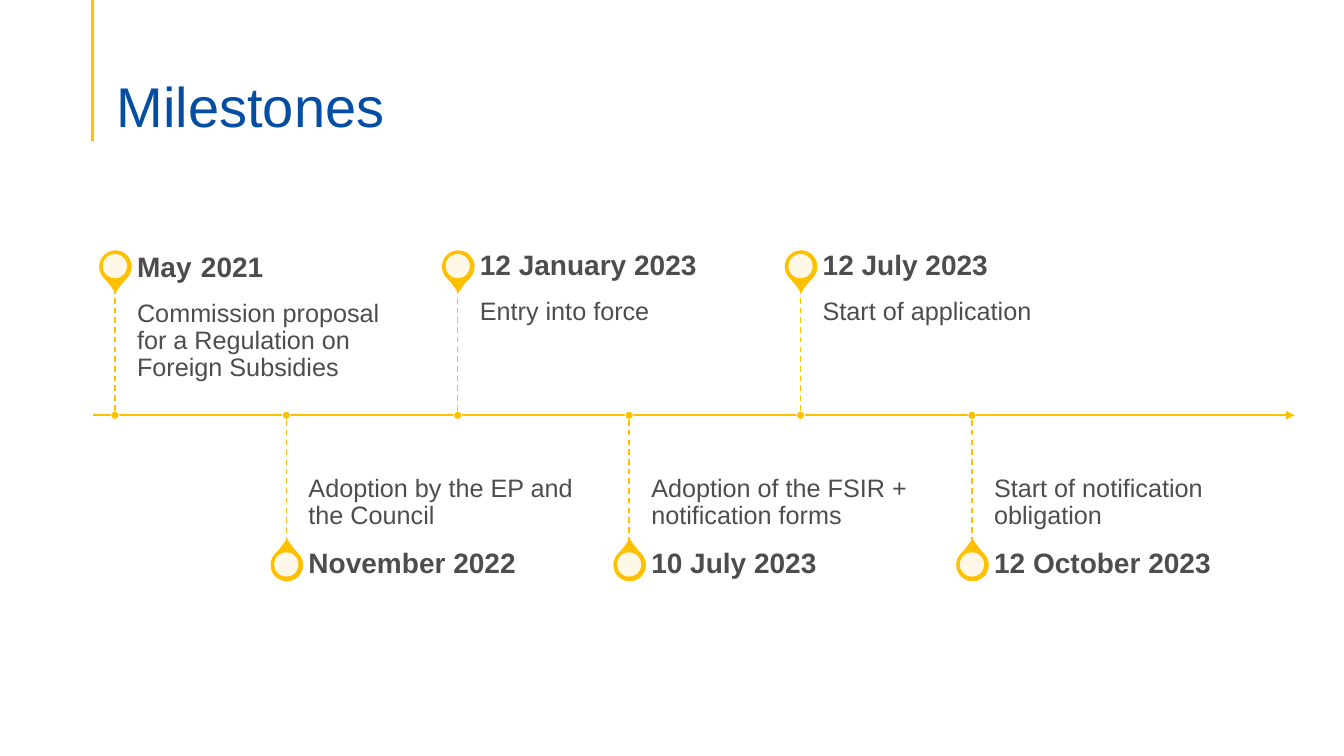
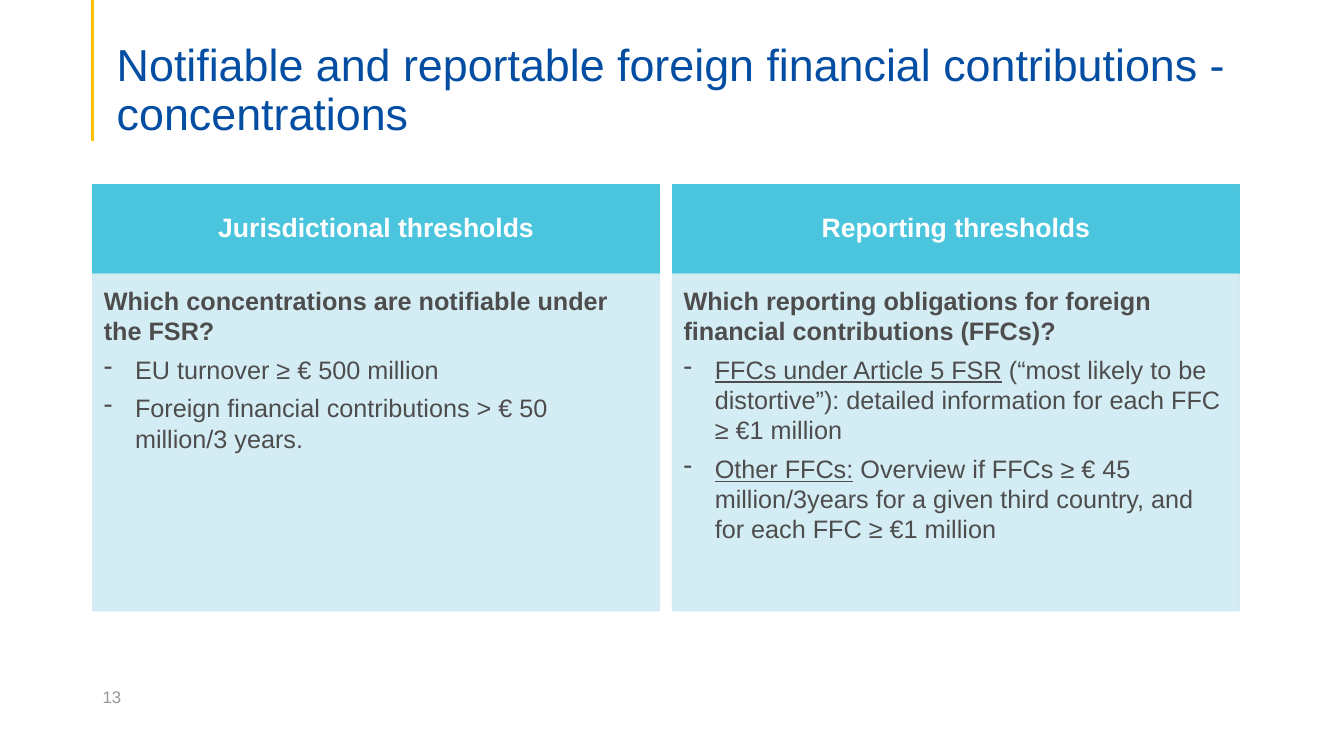
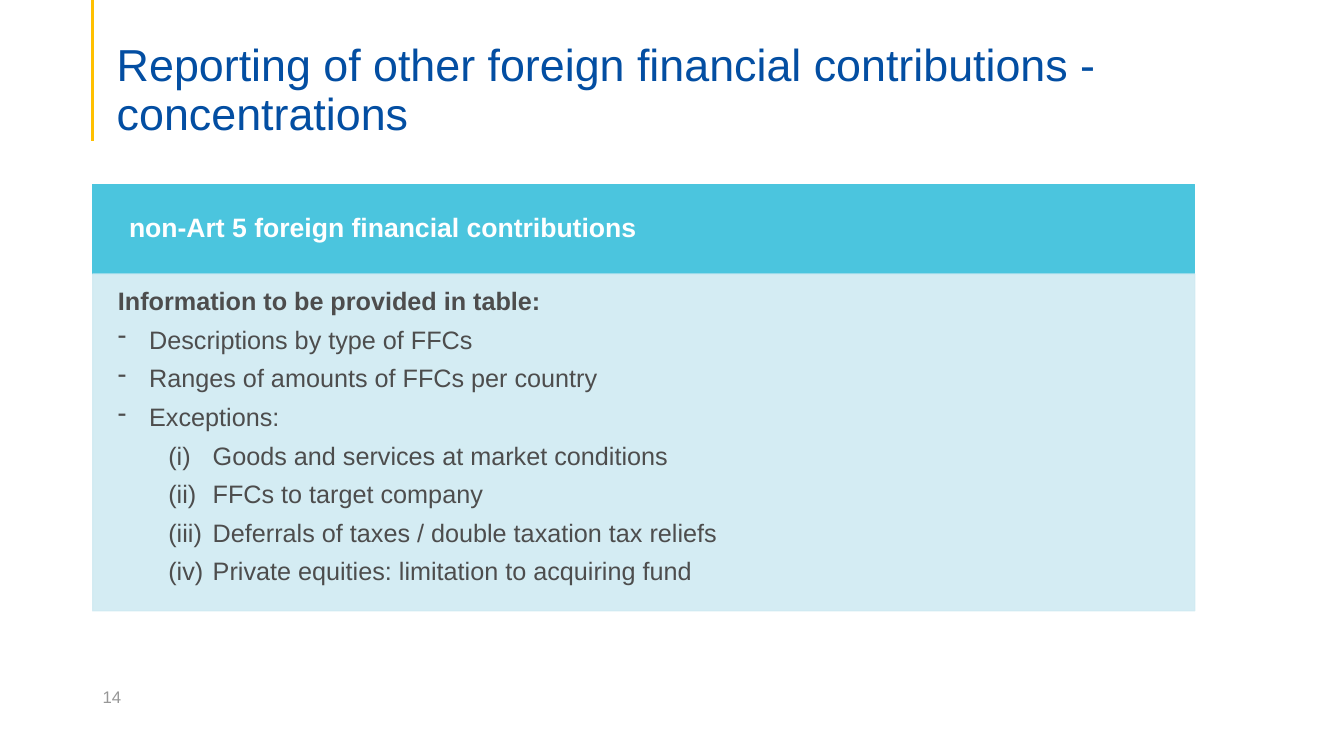
from dataclasses import dataclass

from pptx import Presentation
from pptx.dml.color import RGBColor
from pptx.enum import dml, shapes, text
from pptx.oxml import ns, xmlchemy
from pptx.util import Inches, Pt

GOLD = RGBColor(0xFF, 0xC0, 0x00)
BLUE = RGBColor(0x03, 0x4E, 0xA2)
TEAL = RGBColor(0x4B, 0xC5, 0xDE)
PALE = RGBColor(0xD0, 0xEA, 0xF2)
DARK = RGBColor(0x4D, 0x4D, 0x4D)
GREY = RGBColor(0x97, 0x97, 0x97)
WHITE = RGBColor(0xFF, 0xFF, 0xFF)

FONT = "Arial"
LEFT = 0.92
TOP, MIDDLE, BOTTOM = (
    text.MSO_ANCHOR.TOP, text.MSO_ANCHOR.MIDDLE, text.MSO_ANCHOR.BOTTOM)
CARD_TOP, HEADER_HEIGHT, BODY_HEIGHT = 1.83, 0.89, 3.34
AXIS_Y, STEM, PIN_OFFSET = 4.12, 1.26, 1.48
FIRST_PIN, PIN_PITCH = 1.14, 1.7


@dataclass
class Span:
    text: str
    size: float = 18
    color: RGBColor = DARK
    bold: bool = False
    underline: bool = False


@dataclass
class Para:
    spans: list
    bullet: str = ""  # "" for none, "-" or "(i)"
    align: text.PP_ALIGN = text.PP_ALIGN.LEFT
    spacing: float = 1.0
    after: float = 0


def add_xml(parent, tag, **attributes):
    child = xmlchemy.OxmlElement(tag)
    for name, value in attributes.items():
        child.set(name, value)
    parent.append(child)


class Builder:
    def __init__(self):
        self.deck = Presentation()
        self.deck.slide_width = Inches(13.33)
        self.deck.slide_height = Inches(7.5)
        self.page = None

    def new_page(self, title, size=32, number=None):
        self.page = self.deck.slides.add_slide(self.deck.slide_layouts[6])
        self.line((LEFT, 0), (LEFT, 1.4), 2.25)
        if number:
            self.text_box((LEFT, 6.71, 3, 0.4),
                          [Para([Span(number, 12, GREY)])], MIDDLE)
        self.text_box((1.06, 0.53, 11.5, 0.86),
                      [Para([Span(title, size, BLUE)], spacing=0.9)],
                      BOTTOM, (0.1, 0.05, 0.1, 0))

    def line(self, start, end, width, dashed=False, arrow=False):
        line = self.page.shapes.add_connector(
            shapes.MSO_CONNECTOR.STRAIGHT, *map(Inches, start + end))
        line.line.color.rgb = GOLD
        line.line.width = Pt(width)
        if dashed:
            line.line.dash_style = dml.MSO_LINE.DASH
        properties = line.element.spPr
        if arrow:
            add_xml(properties.find(ns.qn("a:ln")), "a:tailEnd", type="triangle")
        add_xml(properties, "a:effectLst")

    def shape(self, kind, at, fill, outline=None, width=1, opacity=100):
        shape = self.page.shapes.add_shape(kind, *map(Inches, at))
        shape.shadow.inherit = False
        shape.fill.solid()
        shape.fill.fore_color.rgb = fill
        if outline is None:
            shape.line.fill.background()
        else:
            shape.line.color.rgb = outline
            shape.line.width = Pt(width)
        if opacity < 100:
            for color in list(shape.element.spPr.iter(ns.qn("a:srgbClr"))):
                add_xml(color, "a:alpha", val=str(opacity * 1000))
        return shape

    def dot(self, x, y, diameter, fill, **style):
        at = (x - diameter / 2, y - diameter / 2, diameter, diameter)
        self.shape(shapes.MSO_SHAPE.OVAL, at, fill, **style)

    def text_box(self, at, paras, anchor=TOP, insets=(0.1, 0.05, 0.1, 0.05)):
        box = self.page.shapes.add_textbox(*map(Inches, at))
        self.fill_text(box.text_frame, paras, anchor, insets)

    def fill_text(self, frame, paras, anchor, insets):
        """Fill a text frame; insets run left, top, right, bottom."""
        frame.word_wrap = True
        frame.vertical_anchor = anchor
        (frame.margin_left, frame.margin_top,
         frame.margin_right, frame.margin_bottom) = map(Inches, insets)
        for index, para in enumerate(paras):
            target = frame.add_paragraph() if index else frame.paragraphs[0]
            target.alignment = para.align
            target.line_spacing = para.spacing
            target.space_after = Pt(para.after)
            self.set_bullet(target, para.bullet)
            for span in para.spans:
                run = target.add_run()
                run.text = span.text
                run.font.name = FONT
                run.font.size = Pt(span.size)
                run.font.bold = span.bold
                run.font.underline = span.underline
                run.font.color.rgb = span.color

    def set_bullet(self, target, bullet):
        if not bullet:
            return
        numbered = bullet == "(i)"
        left, hanging = (0.94, 0.44) if numbered else (0.31, 0.31)
        properties = target._p.get_or_add_pPr()
        properties.set("marL", str(Inches(left)))
        properties.set("indent", str(-Inches(hanging)))
        if numbered:
            target.level = 1
            add_xml(properties, "a:buAutoNum", type="romanLcParenBoth")
        else:
            add_xml(properties, "a:buChar", char=bullet)

    def milestone(self, x, above, date, event):
        """Pin on the time line, with its date level with the pin head."""
        side = -1 if above else 1
        head_y = AXIS_Y + side * PIN_OFFSET
        stem_end = AXIS_Y + side * STEM
        pin = self.shape(shapes.MSO_SHAPE.TEAR,
                         (x - 0.15, head_y - 0.15, 0.31, 0.31), GOLD, GOLD)
        pin.adjustments[0] = 1.15
        pin.rotation = 135 if above else 315
        self.dot(x, head_y, 0.24, WHITE, opacity=90)
        self.text_box((x + 0.22, min(AXIS_Y, stem_end), 2.83, STEM),
                      [Para([Span(event)], spacing=0.9)],
                      TOP if above else BOTTOM,
                      (0, 0.12, 0.12, 0.19) if above else (0, 0.19, 0, 0.12))
        self.text_box((x + 0.22, head_y - 0.22, 2.83, 0.44),
                      [Para(date, spacing=0.9)], MIDDLE, (0, 0, 0.14, 0))
        self.line((x, stem_end), (x, AXIS_Y), 1, dashed=True)
        self.dot(x, AXIS_Y, 0.08, GOLD, outline=WHITE, width=0.5)

    def card(self, left, width, heading, paras, align=text.PP_ALIGN.CENTER,
             heading_inset=0.15, body_inset=0.11):
        header = self.shape(shapes.MSO_SHAPE.RECTANGLE,
                            (left, CARD_TOP, width, HEADER_HEIGHT), TEAL, TEAL)
        title = Para([Span(heading, 19, WHITE, bold=True)],
                     align=align, spacing=0.9)
        self.fill_text(header.text_frame, [title], MIDDLE,
                       (heading_inset, 0.08, 0.15, 0.08))
        body = self.shape(
            shapes.MSO_SHAPE.RECTANGLE,
            (left, CARD_TOP + HEADER_HEIGHT, width, BODY_HEIGHT),
            PALE, PALE, opacity=90)
        self.fill_text(body.text_frame, paras, TOP,
                       (body_inset, 0.11, 0.15, 0.17))


def question(words):
    return Para([Span(words, bold=True)], after=6)


def item(words, bullet="-", lead=""):
    """List entry, opening with an underlined lead if there is one."""
    spans = [Span(lead, underline=True)] if lead else []
    return Para(spans + [Span(words)], bullet, after=6)


def date(words):
    return [Span(words, 20, bold=True)]


def milestones_slide(builder):
    builder.new_page("Milestones", 40)
    builder.line((LEFT, AXIS_Y), (12.84, AXIS_Y), 1.5, arrow=True)
    milestones = [
        (date("May") + [Span(" ", 24, bold=True)] + date("2021"),
         "Commission proposal for a Regulation on Foreign Subsidies"),
        (date("November 2022"), "Adoption by the EP and the Council"),
        (date("12 January 2023"), "Entry into force"),
        (date("10 July 2023"), "Adoption of the FSIR + notification forms"),
        (date("12 July 2023"), "Start of application"),
        (date("12 October 2023"), "Start of notification obligation"),
    ]
    for index, (when, event) in enumerate(milestones):
        builder.milestone(FIRST_PIN + index * PIN_PITCH, index % 2 == 0,
                          when, event)


def thresholds_slide(builder):
    builder.new_page("Notifiable and reportable foreign financial "
                     "contributions - concentrations", number="13")
    cards = [
        ("Jurisdictional thresholds", [
            question("Which concentrations are notifiable under the FSR?"),
            item("EU turnover ≥ € 500 million"),
            item("Foreign financial contributions > € 50 million/3 years."),
        ]),
        ("Reporting thresholds", [
            question("Which reporting obligations for foreign financial "
                     "contributions (FFCs)?"),
            item(" (“most likely to be distortive”): detailed information "
                 "for each FFC ≥ €1 million",
                 lead="FFCs under Article 5 FSR"),
            item(" Overview if FFCs ≥ € 45 million/3years for a given third "
                 "country, and for each FFC ≥ €1 million",
                 lead="Other FFCs:"),
        ]),
    ]
    width, gap = 5.62, 0.13
    for index, (heading, paras) in enumerate(cards):
        builder.card(LEFT + index * (width + gap), width, heading, paras)


def reporting_slide(builder):
    builder.new_page("Reporting of other foreign financial contributions - "
                     "concentrations", number="14")
    exceptions = [
        "Goods and services at market conditions",
        "FFCs to target company",
        "Deferrals of taxes / double taxation tax reliefs",
        "Private equities: limitation to acquiring fund",
    ]
    paras = [
        question("Information to be provided in table:"),
        item("Descriptions by type of FFCs"),
        item("Ranges of amounts of FFCs per country"),
        item("Exceptions:"),
    ] + [item(words, "(i)") for words in exceptions]
    builder.card(LEFT, 10.93, "non-Art 5 foreign financial contributions",
                 paras, text.PP_ALIGN.LEFT, heading_inset=0.36, body_inset=0.25)


def main():
    builder = Builder()
    milestones_slide(builder)
    thresholds_slide(builder)
    reporting_slide(builder)
    builder.deck.save("out.pptx")


if __name__ == "__main__":
    main()
